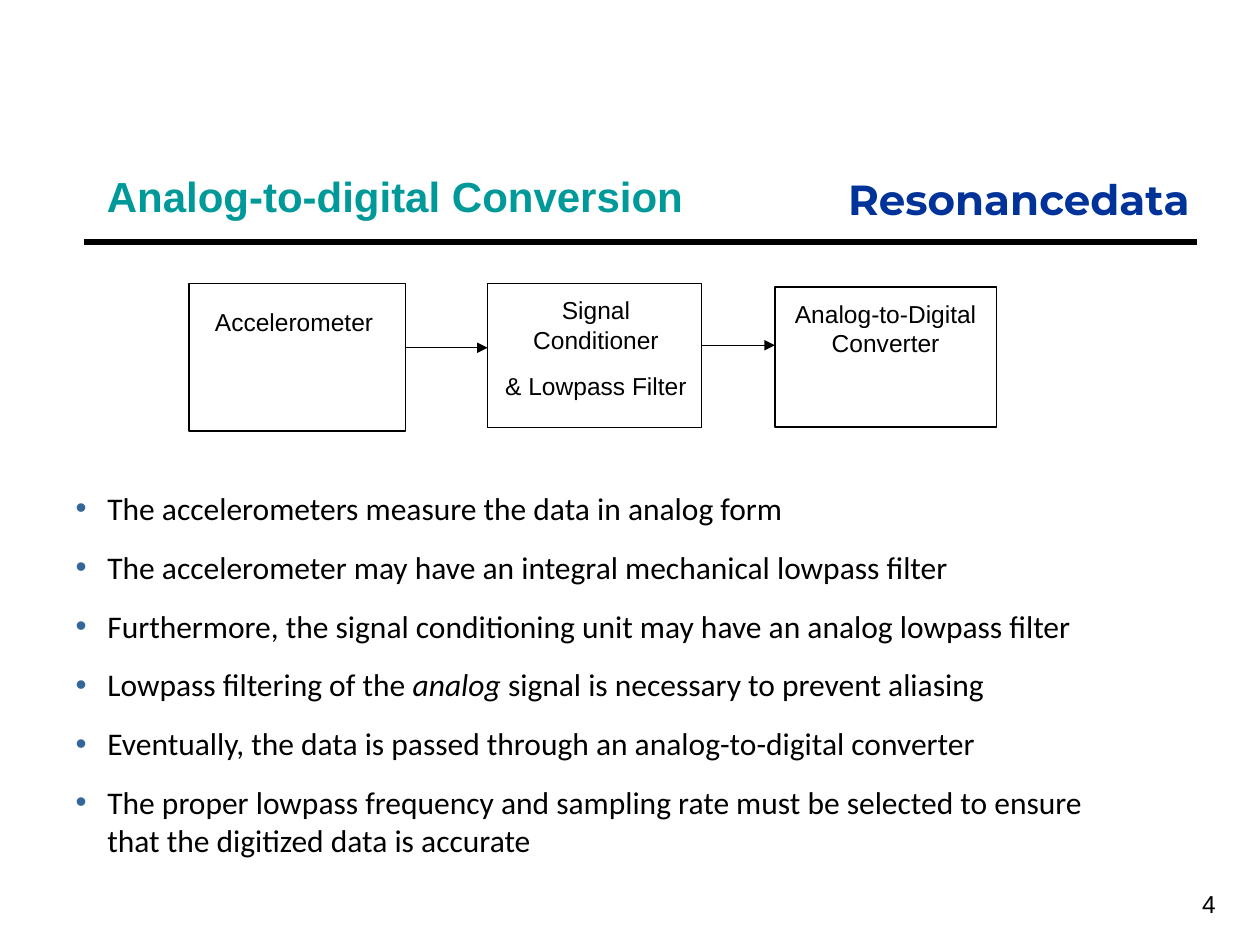
"""Build the slide on analog-to-digital conversion."""
from lxml import etree
from pptx import Presentation
from pptx.dml.color import RGBColor
from pptx.enum.shapes import MSO_CONNECTOR, MSO_SHAPE
from pptx.enum.text import MSO_ANCHOR, MSO_AUTO_SIZE, PP_ALIGN
from pptx.oxml.ns import qn
from pptx.util import Cm, Pt

LEFT, MID, RIGHT = PP_ALIGN.LEFT, PP_ALIGN.CENTER, PP_ALIGN.RIGHT
TOP, CENTER, BOTTOM = MSO_ANCHOR.TOP, MSO_ANCHOR.MIDDLE, MSO_ANCHOR.BOTTOM
FIXED = MSO_AUTO_SIZE.NONE
RECT, LINE = MSO_SHAPE.RECTANGLE, MSO_CONNECTOR.STRAIGHT

BLACK, TEAL, NAVY, STEEL = "000000", "009999", "003399", "336699"

TITLE = "Analog-to-digital Conversion"
BRAND = "Resonancedata"
NUMBER = "4"
STAGES = [
    {"text": ["Accelerometer"], "box": (3.81, 5.72, 4.37, 2.97),
     "label": (4.09, 6.15, 3.68, 2.06), "line": 0.75},
    {"text": ["Signal Conditioner", "& Lowpass Filter"],
     "box": (9.83, 5.72, 4.32, 2.9),
     "label": (10.06, 5.92, 3.91, 2.34), "line": 0.75},
    {"text": ["Analog-to-Digital Converter"],
     "box": (15.62, 5.79, 4.47, 2.82),
     "label": (15.85, 5.99, 4.01, 2.34), "line": 1},
]
ARROW_Y = [7.01, 6.96]
POINTS = [
    ["The accelerometers measure the data in analog form"],
    ["The accelerometer may have an integral mechanical lowpass filter"],
    ["Furthermore, the signal conditioning unit may have an analog lowpass filter"],
    ["Lowpass filtering of the ", "analog ", "signal is necessary to prevent aliasing"],
    ["Eventually, the data is passed through an analog-to-digital converter"],
    ["The proper lowpass frequency and sampling rate must be selected to ensure "
     "that the digitized data is accurate"],
]


def color(code):
    return RGBColor.from_string(code)


def place(shape, spot):
    shape.left, shape.top, shape.width, shape.height = map(Cm, spot)


def style(run, size, face="Arial", code=BLACK, bold=False):
    font = run.font
    font.size, font.name, font.bold = Pt(size), face, bold
    font.color.rgb = color(code)


def write(shape, lines, size, align, anchor=TOP, after=0, **look):
    frame = shape.text_frame
    frame.word_wrap, frame.auto_size = True, FIXED
    frame.vertical_anchor = anchor
    frame.text = "\n".join(lines)
    for para in frame.paragraphs:
        para.alignment, para.space_after = align, Pt(after)
        for run in para.runs:
            style(run, size, **look)
    return frame


def add_text(slide, spot, *args, **look):
    return write(slide.shapes.add_textbox(*map(Cm, spot)), *args, **look)


def add_line(slide, start, end, y, width, arrow=False):
    line = slide.shapes.add_connector(LINE, Cm(start), Cm(y), Cm(end), Cm(y))
    line.line.color.rgb, line.line.width = color(BLACK), Pt(width)
    if arrow:
        etree.SubElement(line.line._get_or_add_ln(), qn("a:tailEnd"), type="triangle")
    etree.SubElement(line._element.spPr, qn("a:effectLst"))


def add_bullet(para):
    props = para._p.get_or_add_pPr()
    props.set("marL", str(Cm(0.64)))
    props.set("indent", str(Cm(-0.64)))
    tint = etree.SubElement(props, qn("a:buClr"))
    etree.SubElement(tint, qn("a:srgbClr"), val=STEEL)
    etree.SubElement(props, qn("a:buFont"), typeface="Arial")
    etree.SubElement(props, qn("a:buChar"), char="•")


def add_points(body):
    place(body, (1.27, 9.73, 20.96, 7.77))
    frame = body.text_frame
    frame.word_wrap, frame.auto_size = True, FIXED
    for i, parts in enumerate(POINTS):
        para = frame.add_paragraph() if i else frame.paragraphs[0]
        para.space_before = para.space_after = Pt(6)
        add_bullet(para)
        for j, part in enumerate(parts):
            run = para.add_run()
            run.text = part
            style(run, 18, "Calibri")
            run.font.italic = j == 1


def add_stages(slide):
    for stage in STAGES:
        box = slide.shapes.add_shape(RECT, *map(Cm, stage["box"]))
        box.shadow.inherit = False
        box.fill.background()
        box.line.color.rgb, box.line.width = color(BLACK), Pt(stage["line"])
    for one, two, y in zip(STAGES, STAGES[1:], ARROW_Y):
        left, _, width, _ = one["box"]
        add_line(slide, left + width, two["box"][0], y, 0.75, arrow=True)
    for stage in STAGES:
        frame = add_text(slide, stage["label"], stage["text"], 14, MID, after=10)
        frame.margin_left = frame.margin_right = Cm(0.03)
        frame.margin_top = frame.margin_bottom = Cm(0.03)


def main():
    deck = Presentation()
    deck.slide_width, deck.slide_height = Cm(25.4), Cm(19.05)
    slide = deck.slides.add_slide(deck.slide_layouts[1])
    title, body = slide.placeholders
    place(title, (1.9, 0.84, 16.94, 3.61))
    frame = write(title, [TITLE], 24, LEFT, BOTTOM, code=TEAL, bold=True)
    frame.margin_bottom = 0
    add_text(slide, (7.42, 3.38, 16.81, 2.29), [BRAND], 24, RIGHT,
             face="Montserrat", code=NAVY, bold=True)
    add_line(slide, 1.7, 24.13, 4.88, 3)
    add_text(slide, (19.48, 17.58, 5.28, 1.27), [NUMBER], 14, RIGHT, CENTER)
    add_points(body)
    add_stages(slide)
    deck.save("out.pptx")


if __name__ == "__main__":
    main()
